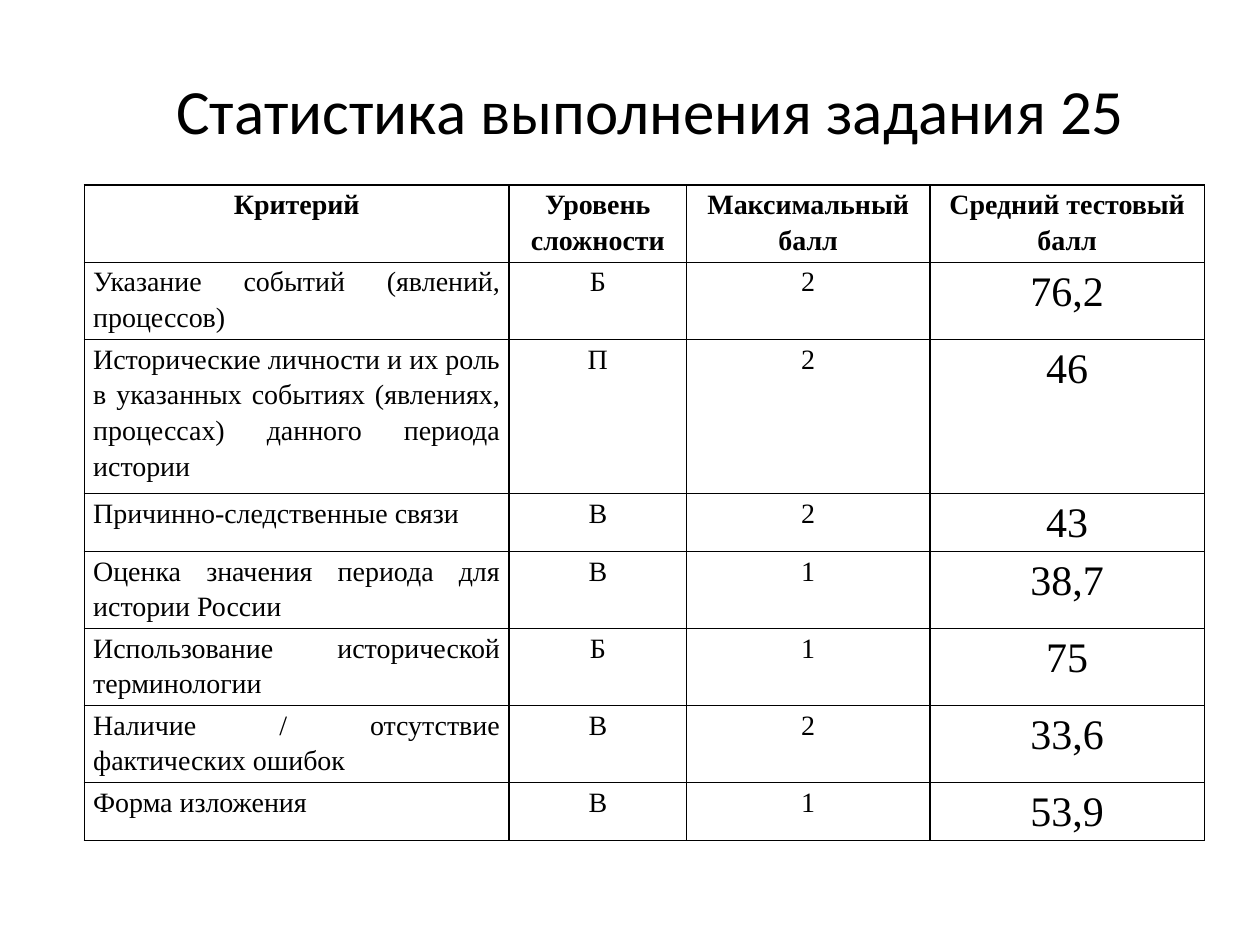
"""Build a slide with a table of exam criteria and average scores."""
import pptx
import pptx.util
import pptx.dml.color
import pptx.enum.text
import pptx.oxml
import pptx.oxml.ns

Inches, Pt = pptx.util.Inches, pptx.util.Pt
ALIGN = pptx.enum.text.PP_ALIGN
COLORS = {"text": "000000", "border": "000000", "fill": "FFFFFF"}
TITLE = "Статистика выполнения задания 25"
HEADER = ("Критерий", "Уровень сложности", "Максимальный балл", "Средний тестовый балл")
CRITERIA = [
    ("Указание событий (явлений, процессов)", "Б", "2", "76,2"),
    ("Исторические личности и их роль в указанных событиях (явлениях, процессах) "
     "данного периода истории", "П", "2", "46"),
    ("Причинно-следственные связи", "В", "2", "43"),
    ("Оценка значения периода для истории России", "В", "1", "38,7"),
    ("Использование исторической терминологии", "Б", "1", "75"),
    ("Наличие / отсутствие фактических ошибок", "В", "2", "33,6"),
    ("Форма изложения", "В", "1", "53,9"),
]
COL_WIDTHS = (3.37, 1.41, 1.93, 2.18)
ROW_UNIT = 0.153
ROW_UNITS = (4, 4, 8, 3, 4, 4, 4, 3)


def rgb(name):
    return pptx.dml.color.RGBColor.from_string(COLORS[name])


def add_run(p, text, size, font, bold=False):
    r = p.add_run()
    r.text = text
    r.font.size, r.font.name, r.font.bold = Pt(size), font, bold
    r.font.color.rgb = rgb("text")


def set_borders(cell):
    tc_pr = cell._tc.get_or_add_tcPr()
    for i, side in enumerate(("lnL", "lnR", "lnT", "lnB")):
        tc_pr.insert(i, pptx.oxml.parse_xml(
            f'<a:{side} {pptx.oxml.ns.nsdecls("a")} w="{Pt(1)}"><a:solidFill>'
            f'<a:srgbClr val="{COLORS["border"]}"/></a:solidFill></a:{side}>'))


def fill_cell(cell, text, row, col):
    cell.margin_left = cell.margin_right = Inches(0.07)
    cell.margin_top = cell.margin_bottom = 0
    cell.fill.solid()
    cell.fill.fore_color.rgb = rgb("fill")
    set_borders(cell)
    p = cell.text_frame.paragraphs[0]
    p.alignment = ALIGN.JUSTIFY if row and col == 0 else ALIGN.CENTER
    p.line_spacing = 1.15
    p.space_after = Pt(6 if col == 0 else 0)
    add_run(p, text, 24 if row and col == 3 else 16, "Times New Roman", row == 0)


def add_title(s):
    title = s.shapes.title
    title.left, title.top, title.width, title.height = map(Inches, (1.3, 0.52, 7.81, 0.71))
    tf = title.text_frame
    tf.word_wrap = True
    tf.vertical_anchor = pptx.enum.text.MSO_ANCHOR.TOP
    p = tf.paragraphs[0]
    p.alignment = ALIGN.LEFT
    add_run(p, TITLE, 36, "Calibri")


def add_scores(s):
    rows = [HEADER, *CRITERIA]
    table = s.shapes.add_table(
        len(rows), len(HEADER), Inches(0.67), Inches(1.47),
        Inches(sum(COL_WIDTHS)), Inches(ROW_UNIT * sum(ROW_UNITS))).table
    table.horz_banding = False
    for column, width in zip(table.columns, COL_WIDTHS):
        column.width = Inches(width)
    for i, values in enumerate(rows):
        table.rows[i].height = Inches(ROW_UNIT * ROW_UNITS[i])
        for j, text in enumerate(values):
            fill_cell(table.cell(i, j), text, i, j)


def main():
    prs = pptx.Presentation()
    prs.slide_width, prs.slide_height = Inches(10), Inches(7.5)
    s = prs.slides.add_slide(prs.slide_layouts[5])
    add_title(s)
    add_scores(s)
    prs.save("out.pptx")


if __name__ == "__main__":
    main()
